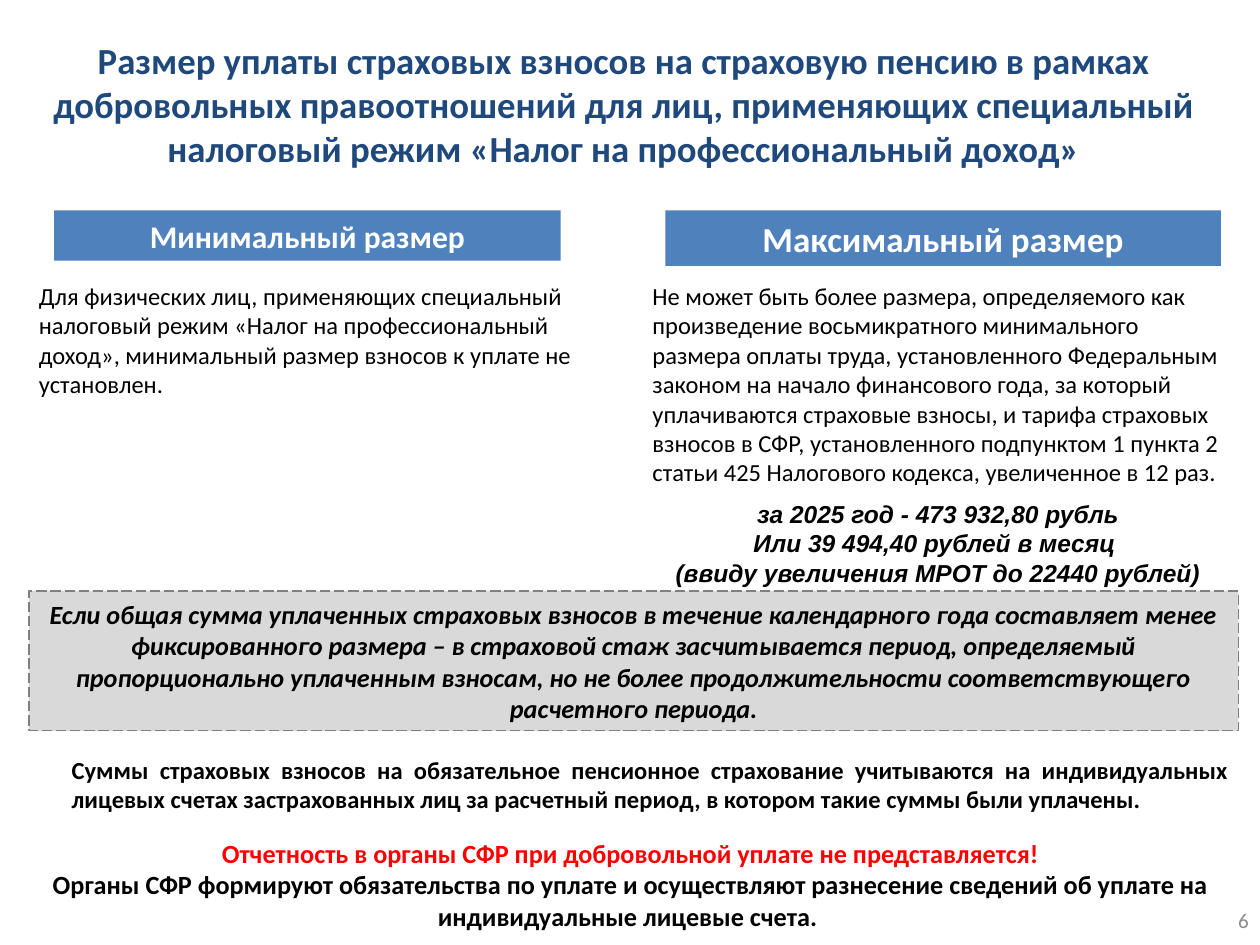
"""Build the slide on pension contributions for payers of the professional income tax."""
from dataclasses import dataclass

from pptx import Presentation
from pptx.dml.color import RGBColor
from pptx.enum.dml import MSO_LINE
from pptx.enum.shapes import MSO_SHAPE
from pptx.enum.text import MSO_ANCHOR, MSO_AUTO_SIZE, PP_ALIGN
from pptx.util import Inches, Pt


@dataclass(frozen=True)
class Theme:
    navy: str = "1F497D"
    blue: str = "4F81BD"
    white: str = "FFFFFF"
    black: str = "000000"
    red: str = "FF0000"
    light_gray: str = "D9D9D9"
    border_gray: str = "808080"
    number_gray: str = "8C8C8C"
    body_font: str = "Calibri"
    amount_font: str = "Arial"
    title_size: int = 21
    maximum_size: int = 20
    minimum_size: int = 18
    note_size: int = 15
    body_size: int = 14
    number_size: int = 12


theme = Theme()


def write(shape, text, *, size=theme.body_size, colors=(theme.black,), font=theme.body_font,
          bold=False, italic=False, align=PP_ALIGN.LEFT, anchor=MSO_ANCHOR.TOP):
    """Write each line as a paragraph; the last color serves all remaining lines."""
    frame = shape.text_frame
    frame.word_wrap = True
    frame.auto_size = MSO_AUTO_SIZE.NONE
    frame.vertical_anchor = anchor
    frame.text = text
    for index, paragraph in enumerate(frame.paragraphs):
        paragraph.alignment = align
        for run in paragraph.runs:
            run.font.name = font
            run.font.size = Pt(size)
            run.font.bold = bold
            run.font.italic = italic
            run.font.color.rgb = RGBColor.from_string(colors[min(index, len(colors) - 1)])


def add_box(left, top, width, height, fill):
    """Add a flat filled rectangle without an outline."""
    box = slide.shapes.add_shape(
        MSO_SHAPE.RECTANGLE, Inches(left), Inches(top), Inches(width), Inches(height))
    box.shadow.inherit = False
    box.fill.solid()
    box.fill.fore_color.rgb = RGBColor.from_string(fill)
    box.line.fill.background()
    return box


presentation = Presentation()
presentation.slide_width = Inches(10)
presentation.slide_height = Inches(7.5)
slide = presentation.slides.add_slide(presentation.slide_layouts[5])

title = slide.shapes.title
title.left, title.top = Inches(0.21), Inches(0.14)
title.width, title.height = Inches(9.48), Inches(1.37)
write(title, "Размер уплаты страховых взносов на страховую пенсию в рамках добровольных "
      "правоотношений для лиц, применяющих специальный налоговый режим "
      "«Налог на профессиональный доход»",
      size=theme.title_size, colors=(theme.navy,), bold=True,
      align=PP_ALIGN.CENTER, anchor=MSO_ANCHOR.MIDDLE)

headings = [
    ("Минимальный размер", 0.43, 4.02, 0.4, theme.minimum_size),
    ("Максимальный размер", 5.28, 4.41, 0.44, theme.maximum_size),
]
for heading, left, width, height, size in headings:
    write(add_box(left, 1.67, width, height, theme.blue), heading, size=size,
          colors=(theme.white,), bold=True, align=PP_ALIGN.CENTER, anchor=MSO_ANCHOR.MIDDLE)

proportion_note = add_box(0.23, 4.69, 9.6, 1.11, theme.light_gray)
proportion_note.line.color.rgb = RGBColor.from_string(theme.border_gray)
proportion_note.line.width = Pt(0.75)
proportion_note.line.dash_style = MSO_LINE.LONG_DASH
write(proportion_note,
      "Если общая сумма уплаченных страховых взносов в течение календарного года составляет "
      "менее фиксированного размера – в страховой стаж засчитывается период, определяемый "
      "пропорционально уплаченным взносам, но не более продолжительности соответствующего "
      "расчетного периода.",
      size=theme.note_size, bold=True, italic=True,
      align=PP_ALIGN.CENTER, anchor=MSO_ANCHOR.MIDDLE)

passages = [
    ((0.21, 2.18, 4.71, 1.04),
     "Для физических лиц, применяющих специальный налоговый режим «Налог на "
     "профессиональный доход», минимальный размер взносов к уплате не установлен.", {}),
    ((5.08, 2.18, 4.73, 1.75),
     "Не может быть более размера, определяемого как произведение восьмикратного минимального "
     "размера оплаты труда, установленного Федеральным законом на начало финансового года, за "
     "который уплачиваются страховые взносы, и тарифа страховых взносов в СФР, установленного "
     "подпунктом 1 пункта 2 статьи 425 Налогового кодекса, увеличенное в 12 раз.", {}),
    ((5.08, 3.91, 4.73, 0.81),
     "за 2025 год - 473 932,80 рубль\n"
     "Или 39 494,40 рублей в месяц \n"
     "(ввиду увеличения МРОТ до 22440 рублей)",
     dict(font=theme.amount_font, bold=True, italic=True, align=PP_ALIGN.CENTER)),
    ((0.47, 5.94, 9.38, 0.57),
     "Суммы страховых взносов на обязательное пенсионное страхование учитываются на "
     "индивидуальных лицевых счетах застрахованных лиц за расчетный период, в котором такие "
     "суммы были уплачены.",
     dict(bold=True, align=PP_ALIGN.JUSTIFY)),
    ((0.12, 6.59, 9.77, 0.86),
     "Отчетность в органы СФР при добровольной уплате не представляется!\n"
     "Органы СФР формируют обязательства по уплате и осуществляют разнесение сведений об "
     "уплате на индивидуальные лицевые счета. ",
     dict(size=theme.note_size, colors=(theme.red, theme.black), bold=True,
          align=PP_ALIGN.CENTER, anchor=MSO_ANCHOR.MIDDLE)),
    ((7.68, 7.1, 2.33, 0.4), "6",
     dict(size=theme.number_size, colors=(theme.number_gray,),
          align=PP_ALIGN.RIGHT, anchor=MSO_ANCHOR.MIDDLE)),
]
for position, passage, style in passages:
    write(slide.shapes.add_textbox(*map(Inches, position)), passage, **style)

presentation.save("out.pptx")
